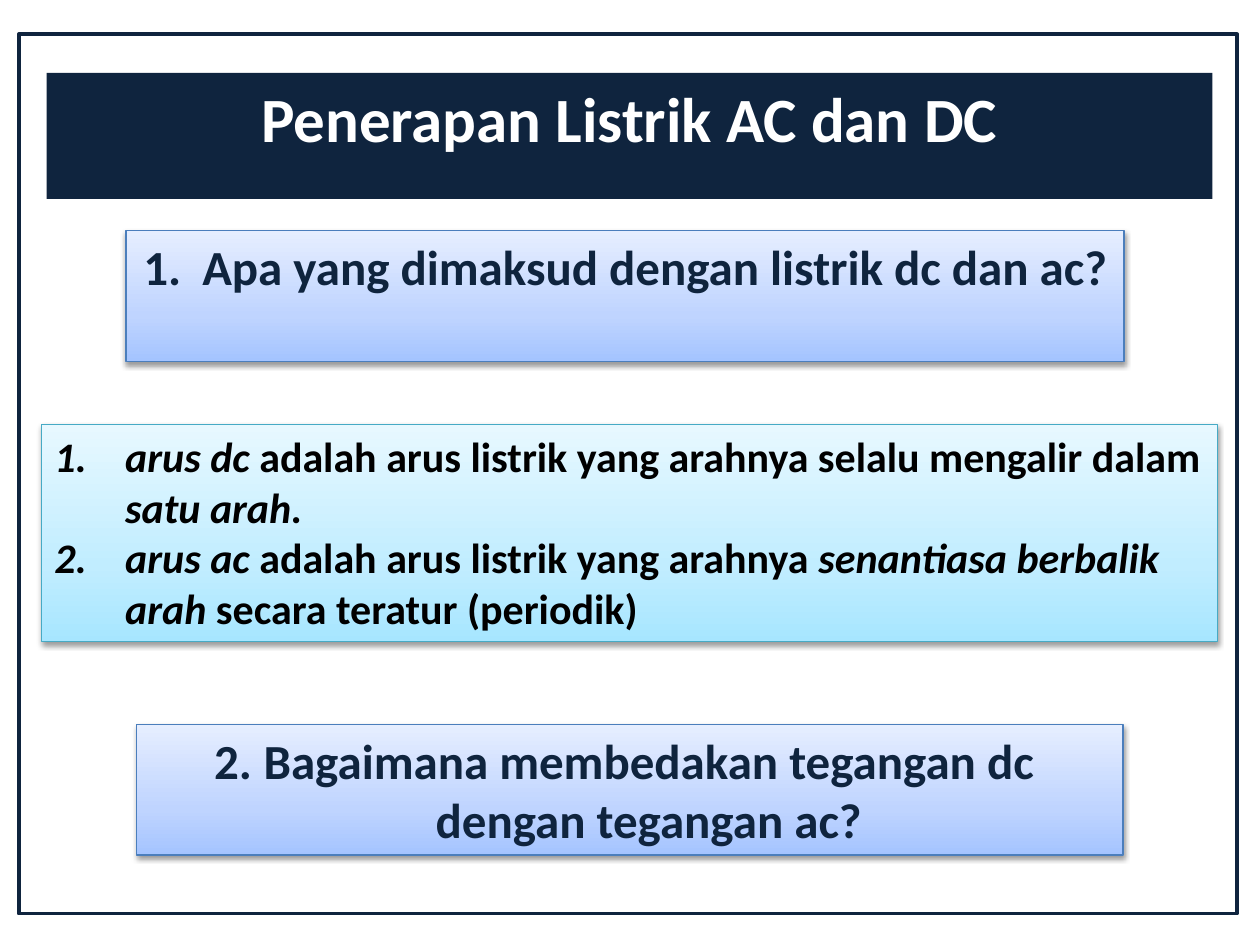
from copy import deepcopy

from lxml import etree
from pptx import Presentation
from pptx.dml.color import RGBColor
from pptx.enum import shapes, text
from pptx.oxml.ns import qn
from pptx.util import Cm, Pt

# Content: text runs are (text, italic)
TITLE = "Penerapan Listrik AC dan DC"
QUESTIONS = [
    # number, text, box (left, top, width, height), left and right margin in cm
    (1, "Apa yang dimaksud dengan listrik dc dan ac?",
     (2.54, 4.65, 20.12, 2.64), 1.19, 0),
    (2, "Bagaimana membedakan tegangan dc\vdengan tegangan ac?",
     (2.75, 14.6, 19.89, 2.64), 1, 0.24),
]
ANSWERS = [
    [("arus dc ", True),
     ("adalah arus listrik yang arahnya selalu mengalir dalam ", False),
     ("satu arah.", True)],
    [("arus ac ", True),
     ("adalah arus listrik yang arahnya ", False),
     ("senantiasa berbalik arah ", True),
     ("secara teratur (periodik)", False)],
]
FRAME_BOX = (0.38, 0.69, 24.56, 17.73)
TITLE_BOX = (0.94, 1.47, 23.5, 2.54)
ANSWER_BOX = (0.84, 8.56, 23.7, 4.37)

THEME = {
    "font": "Calibri",
    "navy": "0F243E", "white": "FFFFFF", "black": "000000",
    "blue": ("A4C4FF", "BFD4FF", "E6EEFF"), "blue_line": "4B7EBC",
    "aqua": ("A7E6FF", "C1EDFF", "E7F8FF"), "aqua_line": "46AAC5",
    "title_size": 36, "question_size": 28, "answer_size": 24,
}


def rgb(name):
    return RGBColor.from_string(THEME[name])


def place(sp, box):
    sp.left, sp.top, sp.width, sp.height = map(Cm, box)


def add_run(p, content, size, color, italic=False):
    r = p.add_run()
    r.text = content
    f = r.font
    f.name, f.size, f.bold, f.italic = THEME["font"], Pt(THEME[size]), True, italic
    f.color.rgb = rgb(color)


def setup_text(sp):
    tf = sp.text_frame
    tf.word_wrap = True
    tf.auto_size = text.MSO_AUTO_SIZE.NONE
    tf.vertical_anchor = text.MSO_ANCHOR.TOP
    return tf


def number(p, start, indent, right=0):
    """Number a paragraph with a hanging indent."""
    pPr = p._p.get_or_add_pPr()
    pPr.set("marL", str(Cm(indent)))
    pPr.set("marR", str(Cm(right)))
    pPr.set("indent", str(-Cm(indent)))
    etree.SubElement(pPr, qn("a:buFont"), typeface="+mj-lt")
    etree.SubElement(pPr, qn("a:buAutoNum"), type="arabicPeriod", startAt=str(start))
    p.space_before = Pt(0)


def style_card(sp, colors, line):
    """Give a box its three-stop gradient, outline and soft shadow."""
    sp.fill.gradient()
    sp.fill.gradient_angle = 90
    first = sp._element.spPr.find(".//" + qn("a:gs"))
    first.addnext(deepcopy(first))
    for stop, pos, color in zip(sp.fill.gradient_stops, (0, 0.35, 1), THEME[colors]):
        stop.position = pos
        stop.color.rgb = RGBColor.from_string(color)
    sp.line.color.rgb = rgb(line)
    sp.line.width = Pt(0.75)
    effects = etree.SubElement(sp._element.spPr, qn("a:effectLst"))
    shadow = etree.SubElement(effects, qn("a:outerShdw"), blurRad=str(Pt(3.1)),
                              dist=str(Pt(1.6)), dir="5400000", rotWithShape="0")
    shade = etree.SubElement(shadow, qn("a:srgbClr"), val=THEME["black"])
    etree.SubElement(shade, qn("a:alpha"), val="38000")


prs = Presentation()
prs.slide_width, prs.slide_height = Cm(25.4), Cm(19.05)
s = prs.slides.add_slide(prs.slide_layouts[1])

# Page frame
frame = s.shapes.add_shape(shapes.MSO_SHAPE.RECTANGLE, *map(Cm, FRAME_BOX))
frame.shadow.inherit = False
frame.fill.background()
frame.line.color.rgb = rgb("navy")
frame.line.width = Pt(2)

# Title band
title = s.shapes.title
place(title, TITLE_BOX)
title.fill.solid()
title.fill.fore_color.rgb = rgb("navy")
p = setup_text(title).paragraphs[0]
p.alignment = text.PP_ALIGN.CENTER
add_run(p, TITLE, "title_size", "white")

# Question cards
for start, question, box, indent, right in QUESTIONS:
    sp = s.shapes.add_shape(shapes.MSO_SHAPE.RECTANGLE, *map(Cm, box))
    style_card(sp, "blue", "blue_line")
    p = setup_text(sp).paragraphs[0]
    number(p, start, indent, right)
    p.alignment = text.PP_ALIGN.CENTER
    for i, row in enumerate(question.split("\v")):
        if i:
            p.add_line_break()
        add_run(p, row, "question_size", "navy")

# Answer list
body = s.placeholders[1]
place(body, ANSWER_BOX)
style_card(body, "aqua", "aqua_line")
tf = setup_text(body)
for i, runs in enumerate(ANSWERS):
    p = tf.add_paragraph() if i else tf.paragraphs[0]
    number(p, 1, 1.43)
    for content, italic in runs:
        add_run(p, content, "answer_size", "black", italic)

prs.save("out.pptx")
